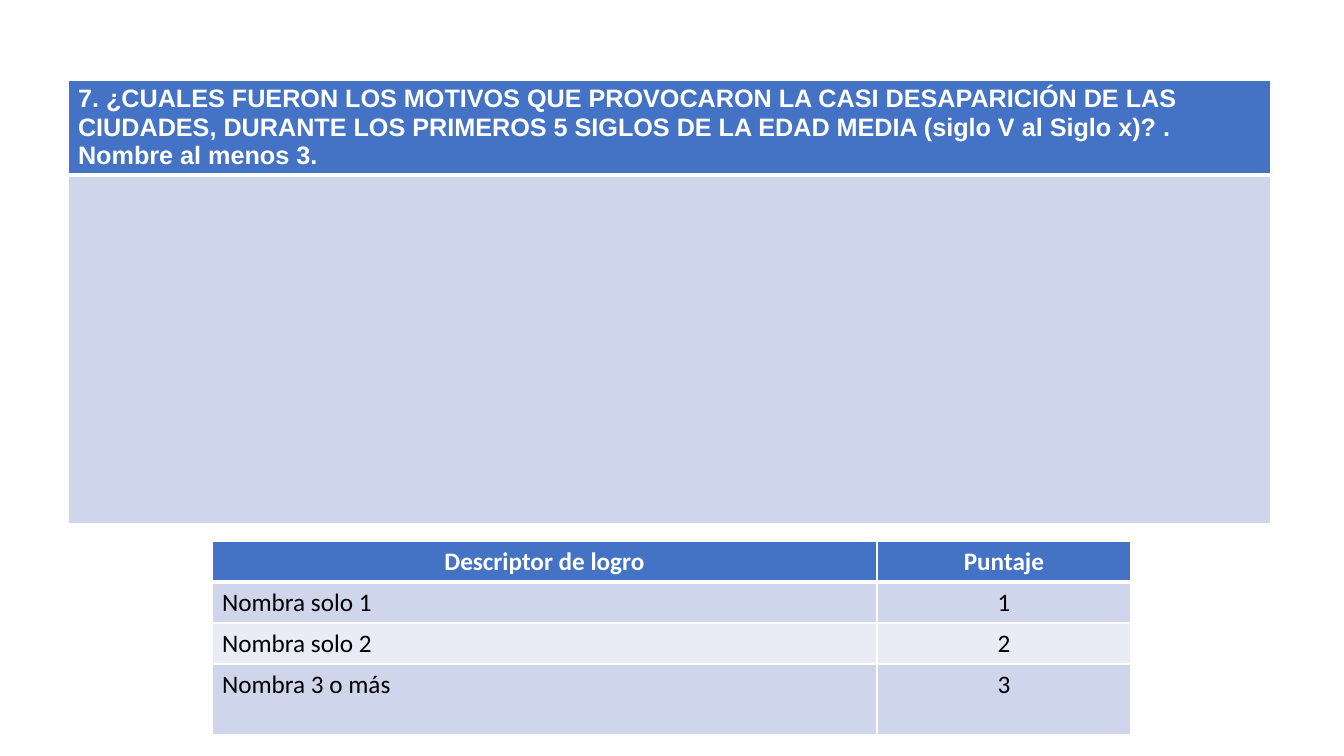
from dataclasses import dataclass

from lxml.etree import SubElement
from pptx import Presentation
from pptx.dml.color import RGBColor
from pptx.enum.text import PP_ALIGN as Align
from pptx.oxml.ns import qn
from pptx.util import Emu, Pt

PX_PER_INCH = 100.8
WHITE, BLACK = "FFFFFF", "000000"
HEADER_FILL = "4472C4"
BANDS = ("CFD5EA", "E9EBF5")
THIN, THICK = 1, 3


@dataclass(frozen=True)
class TableBlock:
    left: int
    top: int
    widths: tuple[int, ...]
    heights: tuple[int, ...]
    rows: tuple[tuple[str, ...], ...]
    aligns: tuple[Align, ...]
    header_align: Align
    font: str


QUESTION = TableBlock(
    left=68, top=80, widths=(1203,), heights=(94, 349),
    rows=(
        ("7. ¿CUALES FUERON LOS MOTIVOS QUE PROVOCARON LA CASI DESAPARICIÓN "
         "DE LAS CIUDADES, DURANTE LOS PRIMEROS 5 SIGLOS DE LA EDAD MEDIA "
         "(siglo V al Siglo x)? . Nombre al menos 3.",),
        ("",),
    ),
    aligns=(Align.LEFT,), header_align=Align.LEFT, font="Arial",
)
RUBRIC = TableBlock(
    left=212, top=541, widths=(665, 254), heights=(41, 41, 41, 71),
    rows=(
        ("Descriptor de logro", "Puntaje"),
        ("Nombra solo 1", "1"),
        ("Nombra solo 2", "2"),
        ("Nombra 3 o más", "3"),
    ),
    aligns=(Align.LEFT, Align.CENTER), header_align=Align.CENTER, font="Calibri",
)


def px(n: int) -> Emu:
    return Emu(round(n * 914400 / PX_PER_INCH))


def color(value: str) -> RGBColor:
    return RGBColor.from_string(value)


def set_borders(cell, top: int, bottom: int) -> None:
    """Draw white cell borders; the top and bottom widths are in points."""
    tc_pr = cell._tc.get_or_add_tcPr()
    for side, width in (("L", THIN), ("R", THIN), ("T", top), ("B", bottom)):
        ln = SubElement(tc_pr, qn(f"a:ln{side}"), w=str(Pt(width)))
        fill = SubElement(ln, qn("a:solidFill"))
        SubElement(fill, qn("a:srgbClr"), val=WHITE)


def style_cell(cell, text: str, row: int, align: Align, font: str) -> None:
    is_header = row == 0
    set_borders(cell, THICK if row == 1 else THIN, THICK if is_header else THIN)
    cell.fill.solid()
    cell.fill.fore_color.rgb = color(HEADER_FILL if is_header else BANDS[(row - 1) % 2])
    cell.text = text
    p = cell.text_frame.paragraphs[0]
    p.alignment = align
    p.font.name = font
    p.font.size = Pt(18)
    p.font.bold = is_header
    p.font.color.rgb = color(WHITE if is_header else BLACK)


def draw_table(slide, block: TableBlock) -> None:
    table = slide.shapes.add_table(
        len(block.heights), len(block.widths), px(block.left), px(block.top),
        px(sum(block.widths)), px(sum(block.heights)),
    ).table
    for column, width in zip(table.columns, block.widths):
        column.width = px(width)
    for r, (height, texts) in enumerate(zip(block.heights, block.rows)):
        table.rows[r].height = px(height)
        for c, text in enumerate(texts):
            align = block.aligns[c] if r else block.header_align
            style_cell(table.cell(r, c), text, r, align, block.font)


def main() -> None:
    prs = Presentation()
    prs.slide_width, prs.slide_height = px(1344), px(756)
    slide = prs.slides.add_slide(prs.slide_layouts[6])
    for block in (QUESTION, RUBRIC):
        draw_table(slide, block)
    prs.save("out.pptx")


if __name__ == "__main__":
    main()
